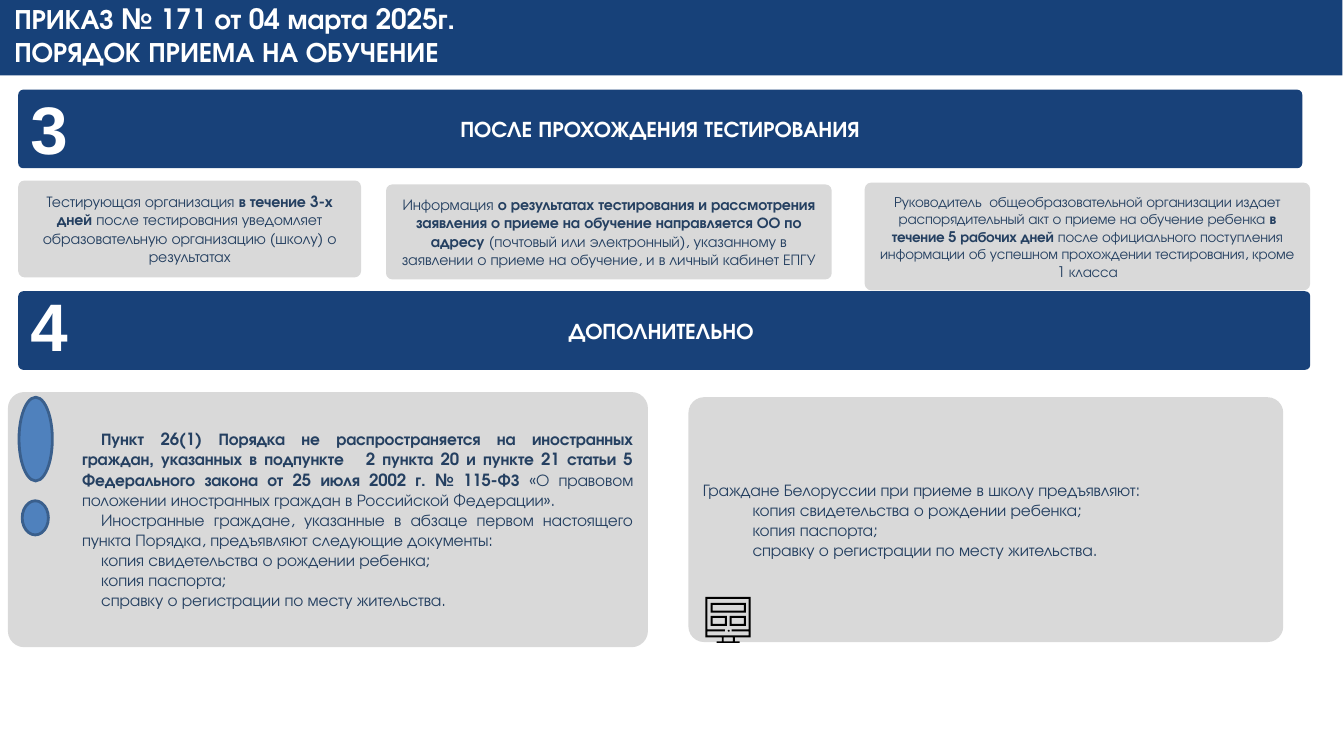
from pptx import Presentation
from pptx.dml.color import RGBColor
from pptx.enum.shapes import MSO_SHAPE as Shape
from pptx.enum.text import MSO_ANCHOR as Anchor, MSO_AUTO_SIZE as AutoSize, PP_ALIGN as Align
from pptx.util import Cm, Pt

HEADER_BLUE = RGBColor(0x17, 0x41, 0x79)
BAR_BLUE = RGBColor(0x18, 0x41, 0x79)
CARD_GREY = RGBColor(0xD9, 0xD9, 0xD9)
TEXT_NAVY = RGBColor(0x25, 0x40, 0x61)
MARK_BLUE = RGBColor(0x4F, 0x81, 0xBD)
MARK_EDGE = RGBColor(0x3A, 0x5F, 0x8C)
WHITE = RGBColor(0xFF, 0xFF, 0xFF)
BLACK = RGBColor(0x00, 0x00, 0x00)

FACE = "TeX Gyre Adventor"
TITLE_FONT = {"name": FACE, "size": Pt(20), "bold": True}
BAR_FONT = {"name": FACE, "size": Pt(16), "bold": True}
NUMBER_FONT = {"name": "Arial", "size": Pt(48), "bold": True}
STEP_FONT = {"name": FACE, "size": Pt(11)}
DECISION_FONT = {"name": FACE, "size": Pt(10.5)}
RULE_FONT = {"name": FACE, "size": Pt(12)}

CARD_CORNER = 0.064
DOCUMENTS = (
    "копия свидетельства о рождении ребенка;",
    "копия паспорта;",
    "справку о регистрации по месту жительства.",
)
STEPS = (
    ((0.46, 4.55, 8.64, 2.44), STEP_FONT, (
        ("Тестирующая организация ", False),
        ("в течение 3-х дней ", True),
        ("после тестирования уведомляет образовательную организацию (школу) о результатах", False))),
    ((9.73, 4.65, 11.23, 2.39), STEP_FONT, (
        ("Информация ", False),
        ("о результатах тестирования и рассмотрения заявления о приеме на обучение "
         "направляется ОО по адресу ", True),
        ("(почтовый или электронный), указанному в заявлении о приеме на обучение, "
         "и в личный кабинет ЕПГУ", False))),
    ((21.79, 4.6, 11.23, 2.72), DECISION_FONT, (
        ("Руководитель  общеобразовательной организации издает распорядительный акт "
         "о приеме на обучение ребенка ", False),
        ("в течение 5 рабочих дней ", True),
        ("после официального поступления информации об успешном прохождении "
         "тестирования, кроме 1 класса", False))),
)
FOREIGNERS = (
    (("Пункт 26(1) Порядка не распространяется на иностранных граждан, указанных "
      "в подпункте   2 пункта 20 и пункте 21 статьи 5 Федерального закона "
      "от 25 июля 2002 г. № 115-ФЗ", True),
     (" «О правовом положении иностранных граждан в Российской Федерации».", False)),
    (("Иностранные граждане, указанные в абзаце первом настоящего пункта Порядка, "
      "предъявляют следующие документы: ", False),),
)
BELARUS = "Граждане Белоруссии при приеме в школу предъявляют:"

MONITOR_OUTLINE = ((0, 0), (114, 0), (114, 102), (74, 102), (74, 112), (86, 112),
                   (86, 116), (28, 116), (28, 112), (41, 112), (41, 102), (0, 102))
MONITOR_SCREEN = ((5, 5), (109, 5), (109, 82), (66, 82), (66, 87), (109, 87),
                  (109, 97), (5, 97), (5, 87), (49, 87), (49, 82), (5, 82))


def add_run(paragraph, text, font, color, tracking=None):
    """Append a run formatted from a dict of font values."""
    run = paragraph.add_run()
    run.text = text
    for attribute, value in font.items():
        setattr(run.font, attribute, value)
    run.font.color.rgb = color
    if tracking is not None:
        run._r.get_or_add_rPr().set("spc", str(tracking))


def add_panel(shapes, kind, box, color):
    """Draw a plain filled shape at a box given in centimetres."""
    panel = shapes.add_shape(kind, *map(Cm, box))
    panel.shadow.inherit = False
    panel.fill.solid()
    panel.fill.fore_color.rgb = color
    panel.line.fill.background()
    return panel


def add_card(shapes, box, color):
    """Draw a rounded card and return its text frame."""
    card = add_panel(shapes, Shape.ROUNDED_RECTANGLE, box, color)
    card.adjustments[0] = CARD_CORNER
    frame = card.text_frame
    frame.word_wrap = True
    frame.vertical_anchor = Anchor.MIDDLE
    return frame


def fill_frame(frame, paragraphs, font, color, align, indents=None, tracking=-10):
    """Write paragraphs of (text, bold) runs, with optional margin and indent."""
    for index, runs in enumerate(paragraphs):
        paragraph = frame.add_paragraph() if index else frame.paragraphs[0]
        paragraph.alignment = align
        if indents:
            margin, indent = indents[index]
            properties = paragraph._p.get_or_add_pPr()
            properties.set("marL", str(Cm(margin)))
            properties.set("indent", str(Cm(indent)))
        for text, bold in runs:
            add_run(paragraph, text, {**font, "bold": bold}, color, tracking)


def add_header(slide):
    """Place the title over a full-width band."""
    band = add_panel(slide.shapes, Shape.RECTANGLE, (0, 0, 33.83, 1.9), HEADER_BLUE)
    title = slide.shapes.title
    title.element.addprevious(band.element)
    place = {"left": Cm(0.36), "top": Cm(0), "width": Cm(27.84), "height": Cm(1.75)}
    for attribute, value in place.items():
        setattr(title, attribute, value)
    frame = title.text_frame
    layout = {"margin_left": 0, "margin_top": Cm(0.03), "margin_right": 0, "margin_bottom": 0,
              "word_wrap": True, "vertical_anchor": Anchor.TOP, "auto_size": AutoSize.NONE}
    for attribute, value in layout.items():
        setattr(frame, attribute, value)
    heading = frame.paragraphs[0]
    heading.alignment = Align.LEFT
    add_run(heading, "ПРИКАЗ № 171 от 04 марта 2025г.", TITLE_FONT, WHITE, -10)
    heading.add_line_break()
    add_run(heading, "ПОРЯДОК ПРИЕМА НА ОБУЧЕНИЕ", TITLE_FONT, WHITE, -10)


def add_section(shapes, number, heading, top, width, number_top):
    """Draw a numbered section bar."""
    frame = add_card(shapes, (0.46, top, width, 1.98), BAR_BLUE)
    fill_frame(frame, [[(heading, True)]], BAR_FONT, WHITE, Align.CENTER, tracking=None)
    numeral = shapes.add_textbox(*map(Cm, (0.48, number_top, 1.52, 2.31))).text_frame
    numeral.word_wrap = True
    fill_frame(numeral, [[(number, True)]], NUMBER_FONT, WHITE, Align.CENTER, tracking=None)


def add_outline(shapes, contours):
    """Draw black contours, in hundredths of a centimetre from the monitor corner."""
    builder = shapes.build_freeform(*contours[0][0], scale=Cm(0.01))
    for index, contour in enumerate(contours):
        if index:
            builder.move_to(*contour[0])
        builder.add_line_segments(contour[1:], close=True)
    outline = builder.convert_to_shape(Cm(17.78), Cm(15.04))
    outline.shadow.inherit = False
    outline.fill.solid()
    outline.fill.fore_color.rgb = BLACK
    outline.line.fill.background()


def corners(left, top, width, height):
    """Return the four corners of a rectangle."""
    right, bottom = left + width, top + height
    return (left, top), (right, top), (right, bottom), (left, bottom)


def add_monitor(shapes):
    """Draw the monitor icon with its three windows."""
    icon = shapes.add_group_shape().shapes
    add_outline(icon, (MONITOR_OUTLINE, MONITOR_SCREEN, corners(46, 102, 23, 10)))
    for left, top, width in ((13, 15, 89), (13, 48, 41), (61, 48, 41)):
        window = corners(left, top, width, 25)
        add_outline(icon, (window, corners(left + 5, top + 5, width - 10, 15)))
    add_panel(icon, Shape.OVAL, (18.34, 15.87, 0.05, 0.05), BLACK)


def main():
    """Build the slide and save it."""
    deck = Presentation()
    deck.slide_width, deck.slide_height = Cm(33.87), Cm(19.05)
    slide = deck.slides.add_slide(deck.slide_layouts[5])
    shapes = slide.shapes
    add_header(slide)
    for box, font, runs in STEPS:
        fill_frame(add_card(shapes, box, CARD_GREY), [runs], font, TEXT_NAVY, Align.CENTER)
    add_section(shapes, "3", "ПОСЛЕ ПРОХОЖДЕНИЯ ТЕСТИРОВАНИЯ", 2.26, 32.36, 2.08)
    add_section(shapes, "4", "ДОПОЛНИТЕЛЬНО ", 7.34, 32.56, 7.04)

    documents = [[(document, False)] for document in DOCUMENTS]
    belarus = add_card(shapes, (17.35, 10.01, 14.99, 6.17), CARD_GREY)
    fill_frame(belarus, [[(BELARUS, False)], *documents], RULE_FONT, TEXT_NAVY,
               Align.JUSTIFY, [(0, 0)] + [(0, 1.25)] * len(documents))
    foreigners = add_card(shapes, (0.2, 9.88, 16.13, 6.43), CARD_GREY)
    rules = [*FOREIGNERS, *documents]
    fill_frame(foreigners, rules, RULE_FONT, TEXT_NAVY, Align.JUSTIFY, [(1.5, 0.48)] * len(rules))

    add_monitor(shapes)
    for box in ((0.48, 10.01, 0.84, 2.11), (0.56, 12.62, 0.66, 0.86)):
        mark = add_panel(shapes, Shape.OVAL, box, MARK_BLUE)
        mark.line.color.rgb = MARK_EDGE
        mark.line.width = Pt(2)
    deck.save("out.pptx")


if __name__ == "__main__":
    main()
